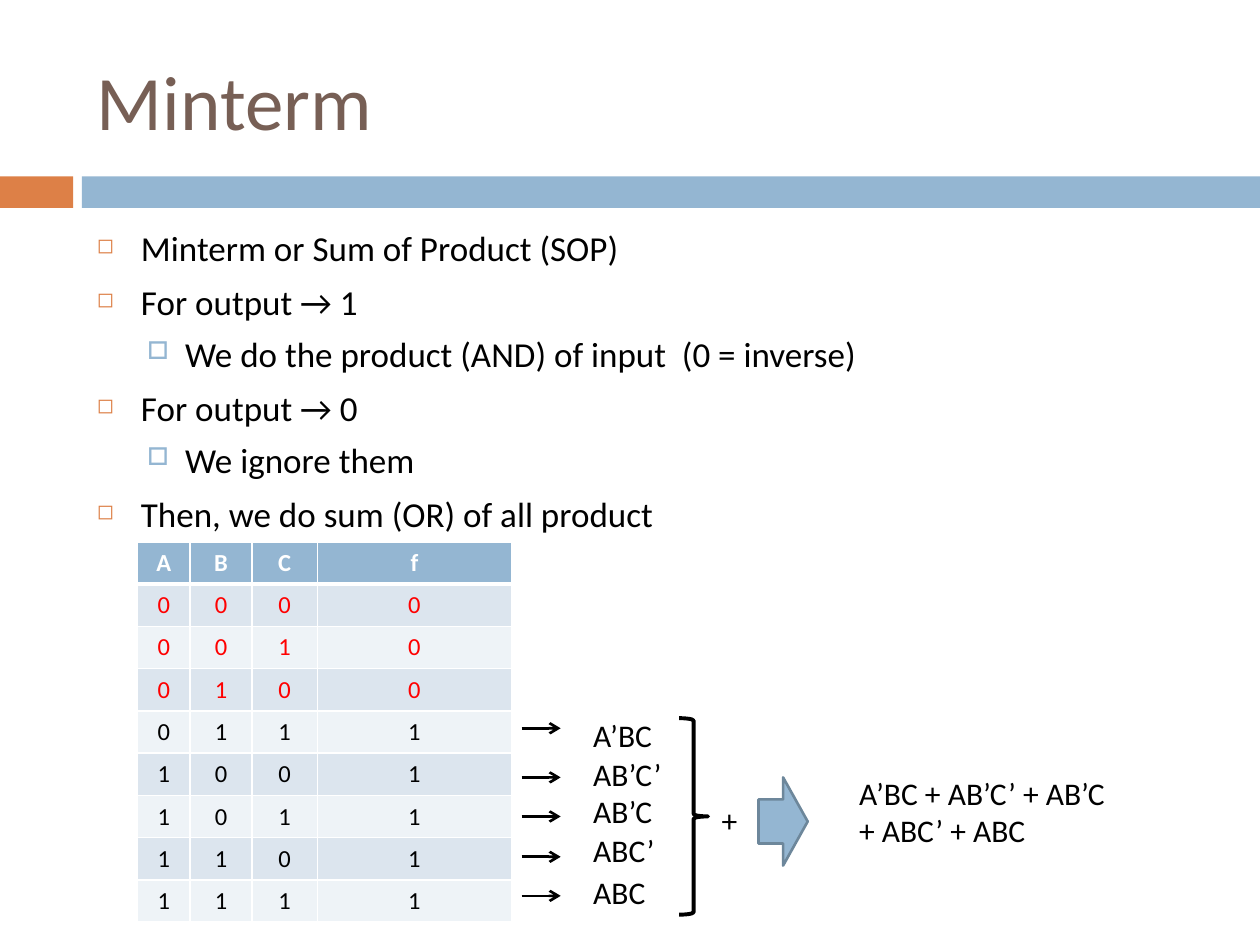
from itertools import product
from lxml import etree
from pptx import Presentation
from pptx.dml.color import RGBColor
from pptx.enum import shapes, text
from pptx.oxml import ns
from pptx.util import Inches, Pt

BLUE, ORANGE, BLACK, WHITE = "94B6D2", "DD8047", "000000", "FFFFFF"


def rgb(value):
    return RGBColor.from_string(value)


def write(paragraph, words, size, color=BLACK, bold=False):
    run = paragraph.add_run()
    run.text = words
    run.font.name = "Calibri"
    run.font.size = Pt(size)
    run.font.bold = bold
    run.font.color.rgb = rgb(color)


deck = Presentation()
deck.slide_width, deck.slide_height = Inches(10), Inches(7.5)
slide = deck.slides.add_slide(deck.slide_layouts[6])
items = slide.shapes

for left, width, color in [(0, 0.58, ORANGE), (0.65, 9.35, BLUE)]:
    band = items.add_shape(shapes.MSO_SHAPE.RECTANGLE, Inches(left), Inches(1.4), Inches(width), Inches(0.25))
    band.shadow.inherit = False
    band.fill.solid()
    band.fill.fore_color.rgb = rgb(color)
    band.line.fill.background()

title = items.add_textbox(Inches(0.67), Inches(0.25), Inches(8.92), Inches(1.08)).text_frame
title.word_wrap = True
title.vertical_anchor = text.MSO_ANCHOR.MIDDLE
write(title.paragraphs[0], "Minterm", 44, "775F55")

steps = [
    (0, "Minterm or Sum of Product (SOP)"),
    (0, "For output → 1"),
    (1, "We do the product (AND) of input  (0 = inverse)"),
    (0, "For output → 0"),
    (1, "We ignore them"),
    (0, "Then, we do sum (OR) of all product"),
]
bullet_levels = [(0.35, 0.35, 7, "◻", ORANGE, 60), (0.7, 0.3, 5.5, "□", BLUE, 70)]
body = items.add_textbox(Inches(0.67), Inches(1.75), Inches(8.92), Inches(4.92)).text_frame
body.word_wrap = True
for index, (level, words) in enumerate(steps):
    step = body.paragraphs[0] if index == 0 else body.add_paragraph()
    margin, hanging, before, mark, color, percent = bullet_levels[level]
    step.level = level
    step.space_before = Pt(before)
    write(step, words, 20)
    properties = step._p.get_or_add_pPr()
    properties.set("marL", str(Inches(margin)))
    properties.set("indent", str(-Inches(hanging)))
    bullet_color = etree.SubElement(properties, ns.qn("a:buClr"))
    etree.SubElement(bullet_color, ns.qn("a:srgbClr"), val=color)
    etree.SubElement(properties, ns.qn("a:buSzPct"), val=str(percent * 1000))
    etree.SubElement(properties, ns.qn("a:buChar"), char=mark)

truth_rows = [(a, b, c, a | b & c) for a, b, c in product((0, 1), repeat=3)]
table_rows = [("A", "B", "C", "f")] + truth_rows
truth = items.add_table(9, 4, Inches(1.09), Inches(4.3), Inches(2.97), Inches(3.02)).table
for column, width in zip(truth.columns, (0.42, 0.49, 0.52, 1.54)):
    column.width = Inches(width)
for r, values in enumerate(table_rows):
    truth.rows[r].height = Inches(3.02 / 9)
    header = r == 0
    fill = BLUE if header else ("EEF3F7", "DCE5EE")[r % 2]
    ink = WHITE if header else BLACK if values[3] else "FF0000"
    for c, value in enumerate(values):
        cell = truth.cell(r, c)
        for side in ("lnL", "lnR", "lnT", "lnB"):
            thick = (header and side == "lnB") or (r == 1 and side == "lnT")
            border = etree.SubElement(cell._tc.get_or_add_tcPr(), ns.qn("a:" + side), w=str(Pt(3 if thick else 1)))
            paint = etree.SubElement(border, ns.qn("a:solidFill"))
            etree.SubElement(paint, ns.qn("a:srgbClr"), val=WHITE)
        cell.fill.solid()
        cell.fill.fore_color.rgb = rgb(fill)
        entry = cell.text_frame.paragraphs[0]
        entry.alignment = text.PP_ALIGN.CENTER
        write(entry, str(value), 14, ink, header)

for y in (5.78, 6.17, 6.48, 6.8, 7.11):
    arrow = items.add_connector(shapes.MSO_CONNECTOR.STRAIGHT, Inches(4.14), Inches(y), Inches(4.45), Inches(y))
    arrow.line.color.rgb = rgb(BLACK)
    arrow.line.width = Pt(1.5)
    etree.SubElement(arrow.line._get_or_add_ln(), ns.qn("a:tailEnd"), type="arrow")
    etree.SubElement(arrow._element.spPr, ns.qn("a:effectLst"))

labels = [
    (4.61, 5.63, 0.67, "A’BC"),
    (4.61, 5.94, 0.75, "AB’C’"),
    (4.61, 6.24, 0.69, "AB’C"),
    (4.61, 6.55, 0.69, "ABC’"),
    (4.61, 6.88, 0.63, "ABC"),
    (5.63, 6.31, 0.37, "+"),
]
for left, top, width, words in labels:
    label = items.add_textbox(Inches(left), Inches(top), Inches(width), Inches(0.4)).text_frame
    label.word_wrap = False
    write(label.paragraphs[0], words, 18)

brace = items.add_shape(shapes.MSO_SHAPE.RIGHT_BRACE, Inches(5.39), Inches(5.7), Inches(0.23), Inches(1.56))
brace.shadow.inherit = False
brace.fill.background()
brace.line.color.rgb = rgb(BLACK)
brace.line.width = Pt(2.25)

result_arrow = items.add_shape(shapes.MSO_SHAPE.RIGHT_ARROW, Inches(6.02), Inches(6.17), Inches(0.39), Inches(0.7))
result_arrow.shadow.inherit = False
result_arrow.fill.solid()
result_arrow.fill.fore_color.rgb = rgb(BLUE)
result_arrow.line.color.rgb = rgb("6D879B")
result_arrow.line.width = Pt(1.5)

result = items.add_textbox(Inches(6.72), Inches(6.09), Inches(2.38), Inches(0.71)).text_frame
result.word_wrap = False
write(result.paragraphs[0], "A’BC + AB’C’ + AB’C", 18)
write(result.add_paragraph(), "+ ABC’ + ABC", 18)

deck.save("out.pptx")
